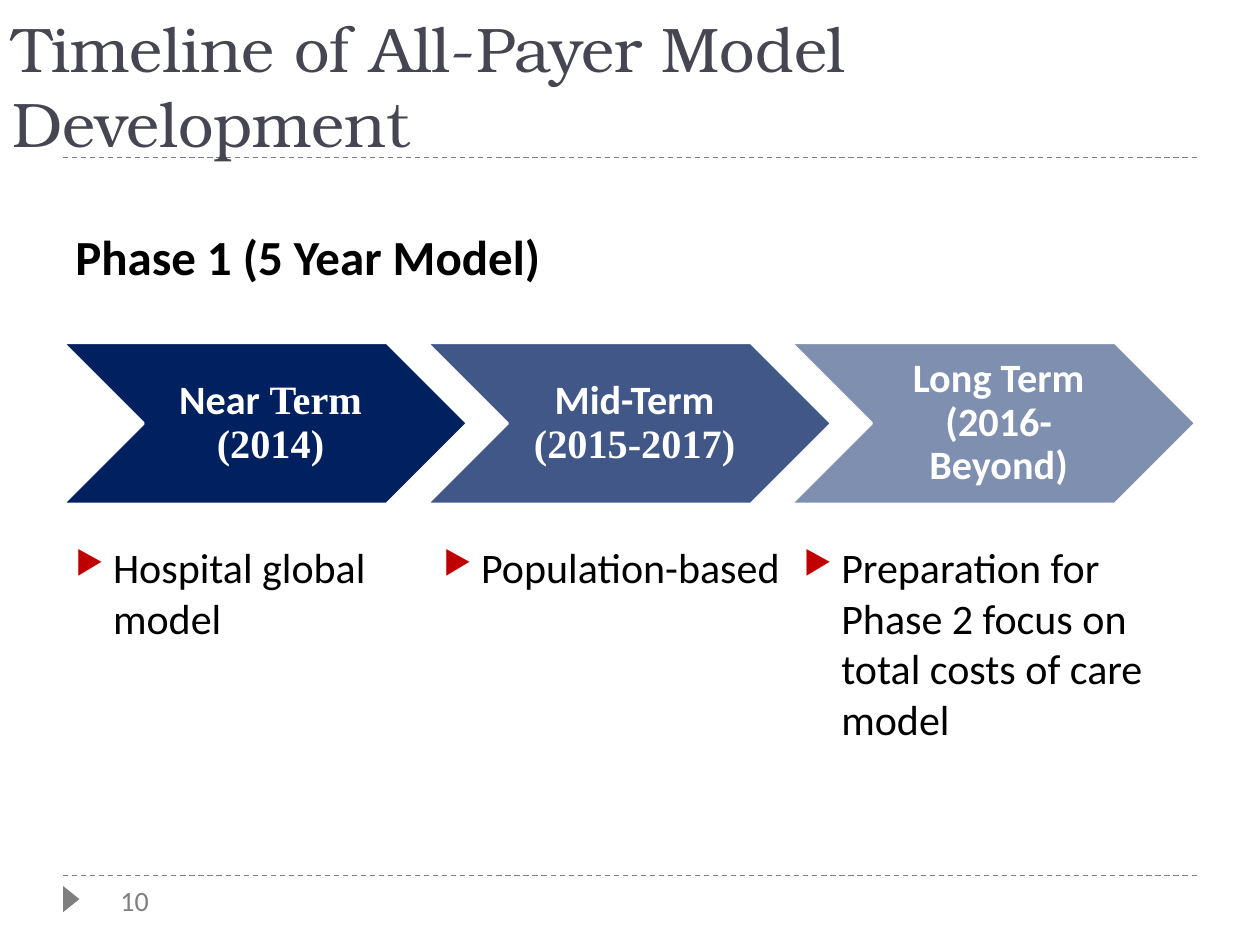
from dataclasses import dataclass
from typing import Any

from lxml.etree import SubElement
from pptx import Presentation
from pptx.dml.color import RGBColor
from pptx.enum.dml import MSO_LINE_DASH_STYLE as Dash
from pptx.enum.shapes import MSO_CONNECTOR as Connector, MSO_SHAPE as Preset
from pptx.enum.text import MSO_ANCHOR as Anchor, MSO_AUTO_SIZE as AutoSize, PP_ALIGN as Align
from pptx.oxml.ns import qn
from pptx.util import Cm, Pt

# Colours and fonts
BLACK = RGBColor(0x00, 0x00, 0x00)
WHITE = RGBColor(0xFF, 0xFF, 0xFF)
NAVY = RGBColor(0x00, 0x20, 0x60)
SLATE = RGBColor(0x46, 0x46, 0x53)
RULE_GREY = RGBColor(0x7F, 0x7F, 0x7F)
NUMBER_GREY = RGBColor(0x80, 0x80, 0x80)
BULLET_RED = "C00000"
SANS, SERIF, TITLE_FONT = "Calibri", "Times New Roman", "TeX Gyre Bonum"

# Layout in centimetres
LEFT, RIGHT = 1.27, 24.13
STAGE_TOP, STAGE_PITCH, STAGE_WIDTH, STAGE_HEIGHT = 6.91, 7.34, 8.15, 3.25
LABEL_INSET, LABEL_WIDTH = 1.65, 4.9
NOTE_TOP, NOTE_WIDTH, NOTE_HEIGHT = 10.8, 7.42, 4.45

# Text formats
TITLE = dict(size=Pt(36), name=TITLE_FONT, color=SLATE)
HEADING = dict(size=Pt(28), name=SANS, color=BLACK, bold=True)
NOTE = dict(size=Pt(24), name=SANS, color=BLACK)
LABEL = dict(size=Pt(23), name=SANS, color=WHITE, bold=True)
LABEL_SERIF = {**LABEL, "name": SERIF}
NUMBER = dict(size=Pt(16), name=SANS, color=NUMBER_GREY)

WRAPPED = dict(word_wrap=True)
FITTED = dict(word_wrap=False, auto_size=AutoSize.SHAPE_TO_FIT_TEXT)
LABEL_FRAME = dict(word_wrap=True, vertical_anchor=Anchor.MIDDLE, margin_left=Cm(0.25),
                   margin_right=Cm(0.08), margin_top=Cm(0.08), margin_bottom=Cm(0.08))


@dataclass(frozen=True)
class Stage:
    label: list[tuple[str, dict]]
    opacity: int
    note: str
    note_left: float


STAGES = [
    Stage([("Near", LABEL), (" Term (2014)", LABEL_SERIF)], 100,
          "Hospital global model", 1.27),
    Stage([("Mid-Term", LABEL), (" (2015-2017)", LABEL_SERIF)], 75,
          "Population-based", 8.69),
    Stage([("Long Term (2016-Beyond)", LABEL)], 50,
          "Preparation for Phase 2 focus on total costs of care model", 15.95),
]


def apply(target: Any, values: dict) -> None:
    for key, value in values.items():
        if key == "color":
            target.color.rgb = value
        else:
            setattr(target, key, value)


def add_text(slide: Any, box: tuple, pieces: list[tuple[str, dict]], frame: dict,
             paragraph_format: dict | None = None) -> Any:
    text_frame = slide.shapes.add_textbox(*map(Cm, box)).text_frame
    apply(text_frame, frame)
    paragraph = text_frame.paragraphs[0]
    apply(paragraph, paragraph_format or {})
    for words, font in pieces:
        run = paragraph.add_run()
        run.text = words
        apply(run.font, font)
    return paragraph


def add_rule(slide: Any, y: float) -> None:
    rule = slide.shapes.add_connector(Connector.STRAIGHT, Cm(LEFT), Cm(y), Cm(RIGHT), Cm(y))
    apply(rule.line, dict(color=RULE_GREY, width=Pt(0.75), dash_style=Dash.DASH))
    SubElement(rule.element.spPr, qn("a:effectLst"))


def add_solid(slide: Any, preset: Preset, box: tuple, color: RGBColor) -> Any:
    shape = slide.shapes.add_shape(preset, *map(Cm, box))
    shape.shadow.inherit = False
    shape.fill.solid()
    shape.fill.fore_color.rgb = color
    return shape


def add_bullet(paragraph: Any) -> None:
    properties = paragraph._p.get_or_add_pPr()
    properties.set("marL", str(Cm(0.76)))
    properties.set("indent", str(-Cm(0.76)))
    bullet_color = SubElement(properties, qn("a:buClr"))
    SubElement(bullet_color, qn("a:srgbClr"), val=BULLET_RED)
    SubElement(properties, qn("a:buSzPct"), val="76000")
    SubElement(properties, qn("a:buChar"), char="▶")


def add_stage(slide: Any, index: int, stage: Stage) -> None:
    left = LEFT + index * STAGE_PITCH
    chevron = add_solid(slide, Preset.CHEVRON,
                        (left, STAGE_TOP, STAGE_WIDTH, STAGE_HEIGHT), NAVY)
    apply(chevron.line, dict(color=WHITE, width=Pt(1.5)))
    if stage.opacity < 100:
        fill_color = chevron.element.spPr.find(qn("a:solidFill")).find(qn("a:srgbClr"))
        SubElement(fill_color, qn("a:alpha"), val=str(stage.opacity * 1000))
    add_text(slide, (left + LABEL_INSET, STAGE_TOP, LABEL_WIDTH, STAGE_HEIGHT), stage.label,
             LABEL_FRAME, dict(alignment=Align.CENTER, line_spacing=0.9))
    note = add_text(slide, (stage.note_left, NOTE_TOP, NOTE_WIDTH, NOTE_HEIGHT),
                    [(stage.note, NOTE)], WRAPPED, dict(space_before=Pt(6)))
    add_bullet(note)


def main() -> None:
    deck = Presentation()
    deck.slide_width, deck.slide_height = Cm(25.4), Cm(19.05)
    slide = deck.slides.add_slide(deck.slide_layouts[6])

    # Rules, page marker and page number
    for y in (17.65, 3.18):
        add_rule(slide, y)
    marker = add_solid(slide, Preset.ISOSCELES_TRIANGLE, (1.17, 17.96, 0.53, 0.33), RULE_GREY)
    marker.rotation = 90
    marker.line.fill.background()
    add_text(slide, (2.18, 17.68, 1.19, 0.94), [("10", NUMBER)], FITTED)

    # Title and phase heading
    add_text(slide, (0, 0.18, 24.13, 3.18), [("Timeline of All-Payer Model Development", TITLE)],
             dict(word_wrap=True, vertical_anchor=Anchor.BOTTOM))
    add_text(slide, (LEFT, 4.45, 11.05, 1.45), [("Phase 1 (5 Year Model)", HEADING)], FITTED)

    # Timeline stages with their notes
    for index, stage in enumerate(STAGES):
        add_stage(slide, index, stage)

    deck.save("out.pptx")


if __name__ == "__main__":
    main()
